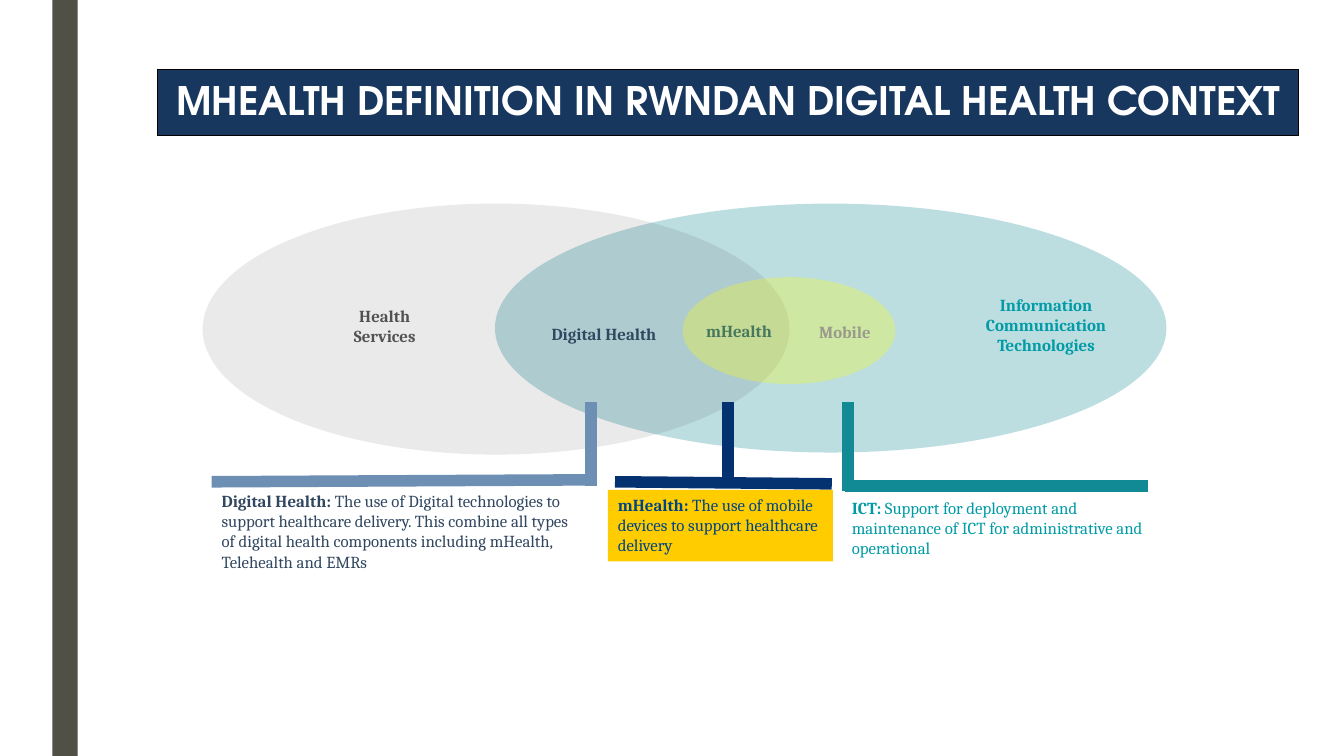
from lxml import etree
from pptx import Presentation
from pptx import util as u
from pptx.dml.color import RGBColor
from pptx.enum import shapes, text
from pptx.oxml.ns import qn

WIDTH, HEIGHT = 13.33, 7.5
COLORS = {
    "bar": "505046", "navy": "17375E", "black": "000000", "white": "FFFFFF",
    "teal": "118A95", "charcoal": "363636", "yellow": "FFFF00", "gold": "FFCC00",
    "ict": "009BA6", "services": "525252", "mhealth": "004484",
    "digital": "314760", "mobile": "9A9A8C",
    "digital_line": "6E8FB4", "mhealth_line": "043271",
}

# Positions are percentages of the slide's width and height.
TITLE = ("MHEALTH DEFINITION IN RWNDAN DIGITAL HEALTH CONTEXT", (11.7, 9.2, 84.92, 8.67))
SIDE_BAR = (3.9, 0, 1.88, 100)
FIELDS = [
    ((36.83, 26.93, 49.96, 32.93), "teal", 28),
    ((15.08, 26.93, 43.66, 33.2), "charcoal", 10),
]
MOBILE_FIELD = ((50.79, 36.67, 15.83, 14.13), "yellow", 28)
LABELS = [
    ("Information Communication Technologies", (70.97, 38.27, 13.73, 9.47), "ict"),
    ("Health Services", (23.56, 39.73, 10.13, 6.8), "services"),
    ("mHealth", (51.31, 41.73, 7.35, 4), "mhealth"),
    ("Digital Health", (37.81, 42.13, 14.25, 4), "digital"),
]
MOBILE_LABEL = ("Mobile", (55.74, 41.87, 14.25, 4), "mobile")
STEM_TOP = 53.2
DEFINITIONS = [
    {"term": "Digital Health: ",
     "meaning": "The use of Digital technologies to support healthcare delivery. "
                "This combine all types of digital health components including "
                "mHealth, Telehealth and EMRs",
     "box": (15.75, 64.27, 28.28, 12.13), "color": "digital", "fill": None,
     "line": "digital_line", "beam": (15.75, 63.73, 43.96, 63.47), "stem": (43.96, 64.27)},
    {"term": "mHealth: ",
     "meaning": "The use of mobile devices to support healthcare delivery",
     "box": (45.24, 64.8, 16.73, 9.47), "color": "mhealth", "fill": "gold",
     "line": "mhealth_line", "beam": (45.76, 63.73, 61.89, 64), "stem": (54.16, 64.27)},
    {"term": "ICT: ",
     "meaning": "Support for deployment and maintenance of ICT for administrative "
                "and operational",
     "box": (62.64, 65.2, 23.63, 9.47), "color": "ict", "fill": None,
     "line": "teal", "beam": (62.87, 64.27, 85.45, 64.27), "stem": (63.09, 64.93)},
]

deck = Presentation()
deck.slide_width, deck.slide_height = u.Inches(WIDTH), u.Inches(HEIGHT)
slide = deck.slides.add_slide(deck.slide_layouts[5])


def place(shares):
    sides = (WIDTH, HEIGHT, WIDTH, HEIGHT)
    return [u.Inches(share * side / 100) for share, side in zip(shares, sides)]


def rgb(name):
    return RGBColor.from_string(COLORS[name])


def paint(shape, color, opacity=100):
    shape.fill.solid()
    shape.fill.fore_color.rgb = rgb(color)
    if opacity < 100:
        tint = shape.fill._xPr.find(qn("a:solidFill"))[0]
        etree.SubElement(tint, qn("a:alpha")).set("val", str(opacity * 1000))


def add_area(kind, box, color, opacity=100):
    area = slide.shapes.add_shape(kind, *place(box))
    area.shadow.inherit = False
    area.line.fill.background()
    paint(area, color, opacity)


def style(run, size, font, color, bold):
    run.font.size, run.font.name, run.font.bold = u.Pt(size), font, bold
    run.font.color.rgb = rgb(color)


def add_words(box, parts, color, align):
    words = slide.shapes.add_textbox(*place(box))
    words.text_frame.word_wrap = True
    paragraph = words.text_frame.paragraphs[0]
    paragraph.alignment = align
    for content, bold in parts:
        run = paragraph.add_run()
        run.text = content
        style(run, 12, "Cambria", color, bold)
    return words


def add_label(content, box, color):
    add_words(box, [(content, True)], color, text.PP_ALIGN.CENTER)


def add_line(ends, color):
    line = slide.shapes.add_connector(shapes.MSO_CONNECTOR.STRAIGHT, *place(ends))
    line.line.color.rgb = rgb(color)
    line.line.width = u.Pt(8.25)
    etree.SubElement(line._element.spPr, qn("a:effectLst"))


def add_title(content, box):
    title = slide.shapes.title
    title.left, title.top, title.width, title.height = place(box)
    paint(title, "navy")
    title.line.color.rgb = rgb("black")
    title.line.width = u.Pt(0.75)
    frame = title.text_frame
    frame.text = content
    frame.word_wrap = True
    frame.auto_size = text.MSO_AUTO_SIZE.NONE
    frame.vertical_anchor = text.MSO_ANCHOR.MIDDLE
    frame.margin_left = frame.margin_right = u.Inches(0.07)
    frame.margin_top = frame.margin_bottom = u.Inches(0.04)
    paragraph = frame.paragraphs[0]
    paragraph.alignment = text.PP_ALIGN.CENTER
    paragraph.line_spacing = 0.9
    style(paragraph.runs[0], 28, "TeX Gyre Adventor", "white", True)


add_title(*TITLE)
add_area(shapes.MSO_SHAPE.RECTANGLE, SIDE_BAR, "bar")
for field in FIELDS:
    add_area(shapes.MSO_SHAPE.OVAL, *field)
for label in LABELS:
    add_label(*label)
for item in DEFINITIONS:
    stem_x, stem_bottom = item["stem"]
    add_line(item["beam"], item["line"])
    add_line((stem_x, STEM_TOP, stem_x, stem_bottom), item["line"])
    note = add_words(item["box"], [(item["term"], True), (item["meaning"], False)],
                     item["color"], text.PP_ALIGN.LEFT)
    if item["fill"]:
        paint(note, item["fill"])
add_area(shapes.MSO_SHAPE.OVAL, *MOBILE_FIELD)
add_label(*MOBILE_LABEL)

deck.save("out.pptx")
